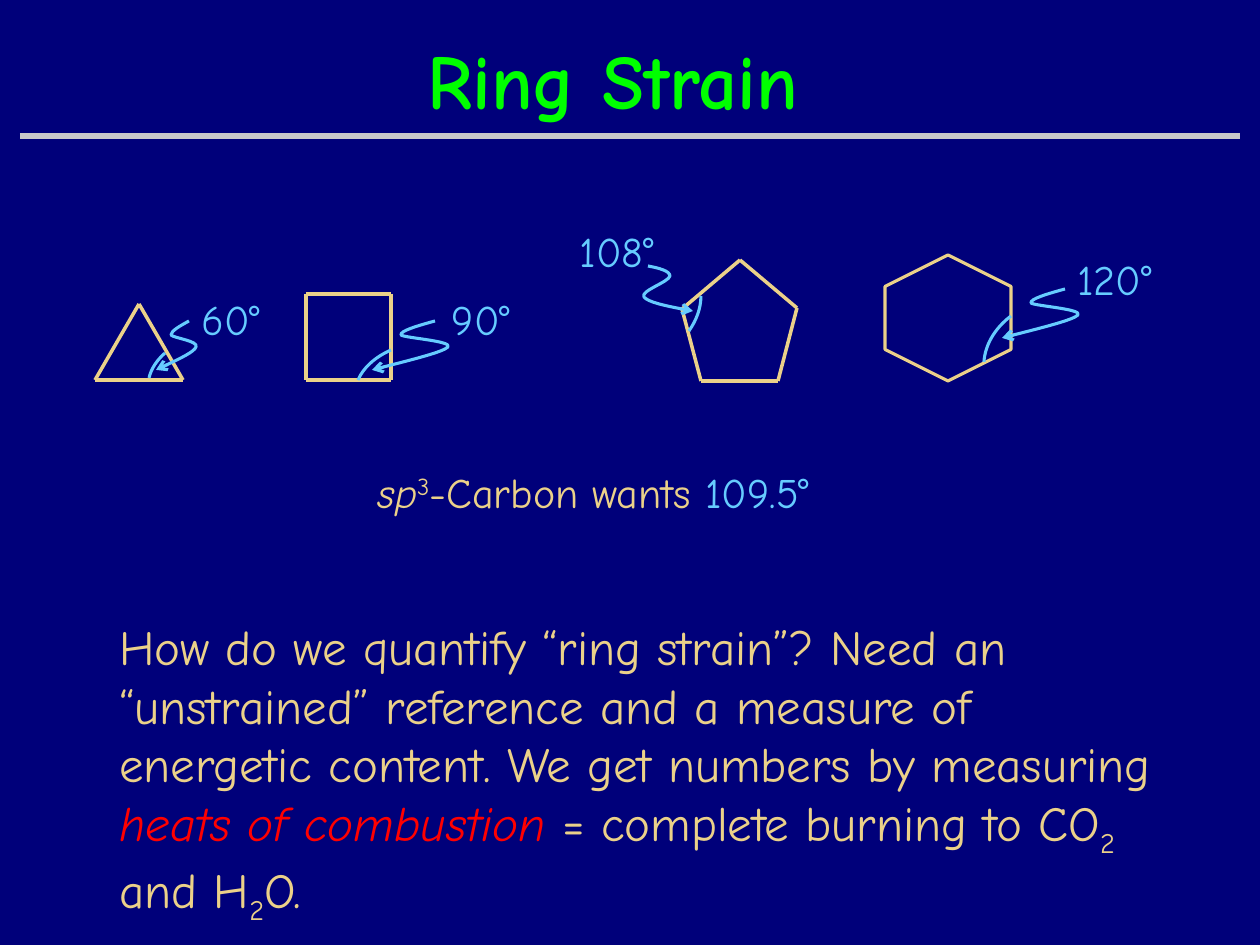
from dataclasses import dataclass
from itertools import pairwise

from lxml.etree import SubElement
from pptx import Presentation
from pptx.dml.color import RGBColor
from pptx.enum.shapes import MSO_CONNECTOR, MSO_SHAPE
from pptx.enum.text import MSO_ANCHOR, PP_ALIGN
from pptx.oxml.ns import qn
from pptx.util import Emu, Pt

EMU_PER_PX = 914400 / 126
FONT = "Comic Neue"
COLORS = {
    "background": "00007A",
    "title": "00FF00",
    "rule": "C9C9C9",
    "ring": "EBD189",
    "angle": "66CCFF",
    "emphasis": "FF0000",
}

Point = tuple[int, int]


@dataclass(frozen=True)
class Ring:
    corners: tuple[Point, ...]


@dataclass(frozen=True)
class Angle:
    label: str
    label_box: tuple[int, int, int, int]
    arc: tuple[Point, ...]
    tip: Point
    wave: tuple[Point, ...]
    stretch: float = 1.0


WAVE = ((0, 0), (35, -9), (71, -18), (76, -23), (81, -29), (32, -32),
        (29, -35), (28, -39), (45, -44), (63, -49))
LEFT_WAVE = ((0, 0), (-23, -4), (-45, -9), (-49, -14), (-53, -20), (-24, -29),
             (-23, -35), (-23, -40), (-34, -43), (-45, -45))

RINGS = (
    Ring(((95, 380), (183, 380), (139, 304))),
    Ring(((306, 294), (391, 294), (391, 380), (306, 380))),
    Ring(((740, 260), (797, 308), (778, 381), (701, 381), (682, 309))),
)
ANGLES = (
    Angle("60°", (176, 287, 110, 63),
          ((165, 353), (157, 360), (151, 369), (149, 378)), (156, 370), WAVE, 0.53),
    Angle("90°", (426, 287, 110, 63),
          ((391, 350), (375, 357), (363, 368), (358, 380)), (372, 370), WAVE),
    Angle("108°", (558, 219, 117, 63),
          ((689, 331), (696, 321), (701, 309), (701, 296)), (693, 311), LEFT_WAVE),
    Angle("120°", (1052, 247, 125, 63),
          ((1011, 316), (994, 329), (985, 346), (984, 362)), (1002, 338), WAVE),
)


def px(length: float) -> Emu:
    return Emu(round(length * EMU_PER_PX))


def rgb(name: str) -> RGBColor:
    return RGBColor.from_string(COLORS[name])


def style_line(part, color: str, width: float) -> None:
    part.line.color.rgb = rgb(color)
    part.line.width = Pt(width)


def draw_line(slide, start: Point, end: Point, color: str, width: float) -> None:
    edge = slide.shapes.add_connector(
        MSO_CONNECTOR.STRAIGHT, *(px(value) for value in (*start, *end)))
    style_line(edge, color, width)
    SubElement(edge._element.spPr, qn("a:effectLst"))


def draw_ring(slide, ring: Ring) -> None:
    for start, end in pairwise((*ring.corners, ring.corners[0])):
        draw_line(slide, start, end, "ring", 2)


def draw_curve(slide, points: list[Point], arrow: bool = False) -> None:
    builder = slide.shapes.build_freeform(*points[0], scale=EMU_PER_PX)
    builder.add_line_segments(points[1:], close=False)
    curve = builder.convert_to_shape()
    curve.shadow.inherit = False
    curve.fill.background()
    style_line(curve, "angle", 1.75)
    outline = next(curve._element.iter(qn("a:path")))
    segments = outline.findall(qn("a:lnTo"))
    for first in range(0, len(segments), 3):
        bezier = SubElement(outline, qn("a:cubicBezTo"))
        for segment in segments[first:first + 3]:
            bezier.append(segment[0])
            outline.remove(segment)
    if arrow:
        SubElement(curve.line._get_or_add_ln(), qn("a:headEnd"), type="arrow")


def add_text_frame(slide, box: tuple[int, int, int, int]):
    frame = slide.shapes.add_textbox(*(px(value) for value in box)).text_frame
    frame.word_wrap = True
    return frame


def write(paragraph, text: str, *, size: int, color: str = "ring", bold: bool = False,
          italic: bool = False, baseline: int = 0) -> None:
    run = paragraph.add_run()
    run.text = text
    run.font.name = FONT
    run.font.size = Pt(size)
    run.font.bold = bold
    run.font.italic = italic
    run.font.color.rgb = rgb(color)
    if baseline:
        run._r.get_or_add_rPr().set("baseline", str(baseline * 1000))


def draw_angle(slide, angle: Angle) -> None:
    draw_curve(slide, list(angle.arc))
    tip_x, tip_y = angle.tip
    pointer = [(round(tip_x + dx * angle.stretch), tip_y + dy) for dx, dy in angle.wave]
    draw_curve(slide, pointer, arrow=True)
    label = add_text_frame(slide, angle.label_box).paragraphs[0]
    label.alignment = PP_ALIGN.CENTER
    write(label, angle.label, size=24, color="angle")


def draw_hexagon(slide) -> None:
    hexagon = slide.shapes.add_shape(
        MSO_SHAPE.HEXAGON, px(885), px(255), px(126), px(126))
    hexagon.adjustments[0] = 0.25
    hexagon.rotation = 90
    hexagon.shadow.inherit = False
    hexagon.fill.background()
    style_line(hexagon, "ring", 1.75)


def write_title(slide) -> None:
    frame = add_text_frame(slide, (415, 0, 520, 158))
    frame.vertical_anchor = MSO_ANCHOR.MIDDLE
    write(frame.paragraphs[0], "Ring Strain", size=44, color="title", bold=True)


def write_ideal_angle(slide) -> None:
    ideal = add_text_frame(slide, (365, 460, 536, 63)).paragraphs[0]
    write(ideal, "sp", size=24, italic=True)
    write(ideal, "3", size=24, baseline=30)
    write(ideal, "-Carbon wants", size=24)
    write(ideal, " 109.5°", size=24, color="angle")


def write_question(slide) -> None:
    frame = add_text_frame(slide, (107, 610, 1072, 310))
    write(frame.paragraphs[0], "How do we quantify “ring strain”? Need an", size=28)
    write(frame.add_paragraph(), "“unstrained” reference and a measure of", size=28)
    answer = frame.add_paragraph()
    write(answer, "energetic content. We get numbers by measuring ", size=28)
    write(answer, "heats of combustion ", size=28, color="emphasis", italic=True)
    write(answer, "= complete burning to CO", size=28)
    write(answer, "2 ", size=28, baseline=-25)
    write(answer, "and H", size=28)
    write(answer, "2", size=28, baseline=-25)
    write(answer, "O.", size=28)


def main() -> None:
    deck = Presentation()
    deck.slide_width, deck.slide_height = px(1260), px(945)
    slide = deck.slides.add_slide(deck.slide_layouts[6])
    slide.background.fill.solid()
    slide.background.fill.fore_color.rgb = rgb("background")
    write_title(slide)
    draw_line(slide, (20, 136), (1240, 136), "rule", 3)
    for ring in RINGS:
        draw_ring(slide, ring)
    draw_hexagon(slide)
    for angle in ANGLES:
        draw_angle(slide, angle)
    write_ideal_angle(slide)
    write_question(slide)
    deck.save("out.pptx")


if __name__ == "__main__":
    main()
